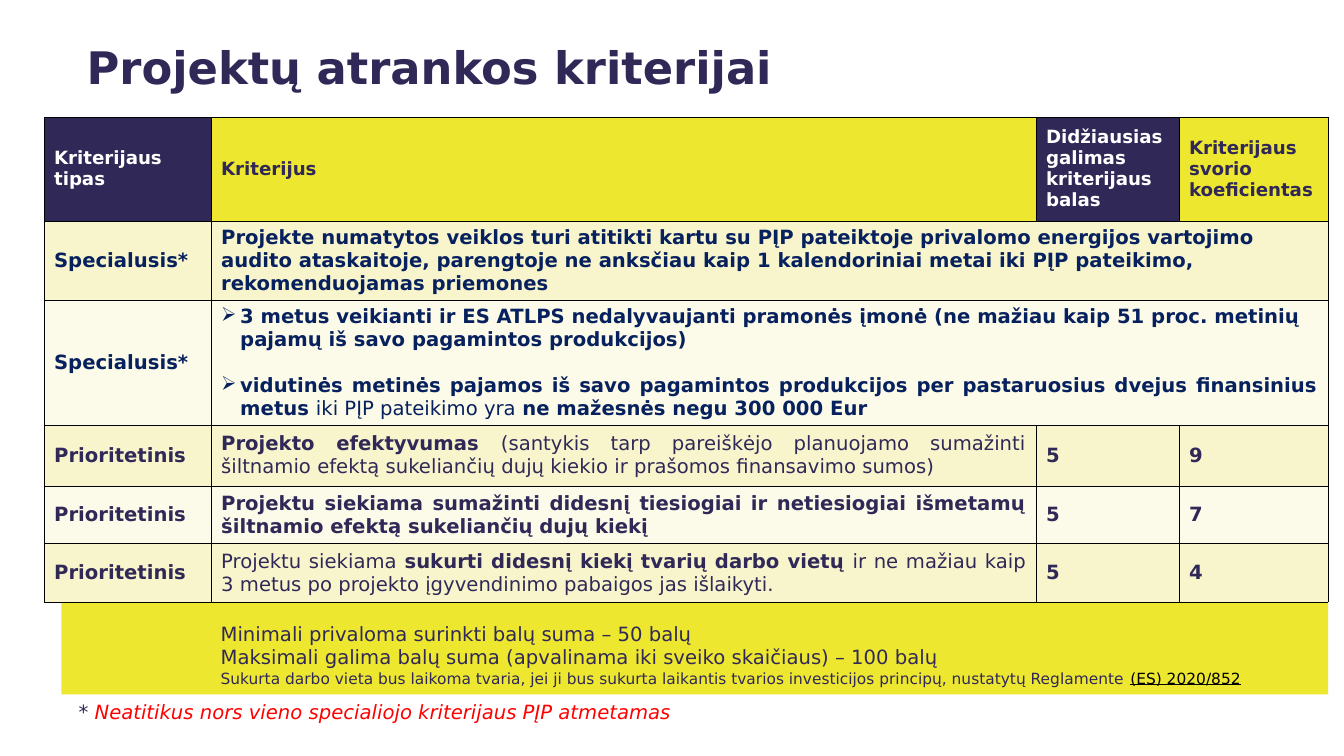
from lxml import etree
from pptx import Presentation
from pptx import util as u
from pptx.dml.color import RGBColor
from pptx.enum import shapes, text
from pptx.oxml.ns import qn

FONT = "DejaVu Sans"
COLORS = {
    "violet": "302857", "navy": "07215E", "white": "FFFFFF", "black": "000000",
    "red": "FF0000", "yellow": "EEE730", "cream": "F8F5CD", "pale": "FCFAE8",
}
TITLE = "Projektų atrankos kriterijai"
HEADERS = [
    ("Kriterijaus tipas", "white", "violet"),
    ("Kriterijus", "violet", "yellow"),
    ("Didžiausias galimas kriterijaus balas", "white", "violet"),
    ("Kriterijaus svorio koeficientas", "violet", "yellow"),
]
# Each criterion is a list of paragraphs; each paragraph is a list of (text, bold).
SPECIAL = [
    [[("Projekte numatytos veiklos turi atitikti kartu su PĮP pateiktoje privalomo "
       "energijos vartojimo audito ataskaitoje, parengtoje ne anksčiau kaip 1 kalendoriniai "
       "metai iki PĮP pateikimo, rekomenduojamas priemones", True)]],
    [[("3 metus veikianti ir ES ATLPS nedalyvaujanti pramonės įmonė (ne mažiau kaip "
       "51 proc. metinių pajamų iš savo pagamintos produkcijos)", True)],
     [("vidutinės metinės pajamos iš savo pagamintos produkcijos per pastaruosius "
       "dvejus finansinius metus ", True),
      ("iki PĮP pateikimo yra ", False),
      ("ne mažesnės negu 300 000 Eur", True)]],
]
PRIORITY = [
    ([("Projekto efektyvumas ", True),
      ("(santykis tarp pareiškėjo planuojamo sumažinti šiltnamio efektą sukeliančių "
       "dujų kiekio ir prašomos finansavimo sumos)", False)], "5", "9"),
    ([("Projektu siekiama sumažinti didesnį tiesiogiai ir netiesiogiai išmetamų "
       "šiltnamio efektą sukeliančių dujų kiekį", True)], "5", "7"),
    ([("Projektu siekiama ", False),
      ("sukurti didesnį kiekį tvarių darbo vietų ", True),
      ("ir ne mažiau kaip 3 metus po projekto įgyvendinimo pabaigos jas išlaikyti.",
       False)], "5", "4"),
]
SCORES = [
    "Minimali privaloma surinkti balų suma – 50 balų",
    "Maksimali galima balų suma (apvalinama iki sveiko skaičiaus) – 100 balų",
]
JOBS_NOTE = ("Sukurta darbo vieta bus laikoma tvaria, jei ji bus sukurta laikantis tvarios "
             "investicijos principų, nustatytų Reglamente ")
REGULATION = "(ES) 2020/852"
FOOTNOTE = "Neatitikus nors vieno specialiojo kriterijaus PĮP atmetamas"

COLUMN_WIDTHS = [4.21, 20.79, 3.6, 3.76]
ROW_HEIGHTS = [2.62, 1.99, 3.15, 1.53, 1.45, 1.47]
TABLE_LEFT, TABLE_TOP = 1.11, 2.95
BAND_LEFT, BAND_BOTTOM = 1.55, 17.5
TABLE_RIGHT = TABLE_LEFT + sum(COLUMN_WIDTHS)


def rgb(name):
    return RGBColor.from_string(COLORS[name])


def add_text(paragraph, content, size=14, color="violet", bold=False, italic=False,
             underline=False):
    run = paragraph.add_run()
    run.text = content
    font = run.font
    font.name, font.size = FONT, u.Pt(size)
    font.bold, font.italic, font.underline = bold, italic, underline
    font.color.rgb = rgb(color)


def add_bullet(paragraph):
    properties = paragraph._p.get_or_add_pPr()
    properties.set("marL", str(u.Cm(0.48)))
    properties.set("indent", str(-u.Cm(0.48)))
    etree.SubElement(properties, qn("a:buChar")).set("char", "➢")


def style_cell(cell, fill):
    """Fill the cell, centre it vertically and give it thin black borders."""
    cell.fill.solid()
    cell.fill.fore_color.rgb = rgb(fill)
    cell.vertical_anchor = text.MSO_ANCHOR.MIDDLE
    properties = cell._tc.get_or_add_tcPr()
    for index, side in enumerate(("lnL", "lnR", "lnT", "lnB")):
        line = etree.Element(qn(f"a:{side}"), w=str(u.Pt(0.25)))
        solid = etree.SubElement(line, qn("a:solidFill"))
        etree.SubElement(solid, qn("a:srgbClr"), val=COLORS["black"])
        properties.insert(index, line)


def add_box(slide, left, top, width, height):
    box = slide.shapes.add_textbox(u.Cm(left), u.Cm(top), u.Cm(width), u.Cm(height))
    box.text_frame.word_wrap = True
    return box.text_frame


def add_title(slide):
    title = slide.shapes.title
    title.left, title.top, title.width, title.height = map(u.Cm, (1.93, 0.66, 18.64, 2.03))
    frame = title.text_frame
    frame.auto_size = text.MSO_AUTO_SIZE.NONE
    frame.vertical_anchor = text.MSO_ANCHOR.MIDDLE
    paragraph = frame.paragraphs[0]
    paragraph.alignment = text.PP_ALIGN.LEFT
    add_text(paragraph, TITLE, size=32, bold=True)


def add_band(slide):
    top = 4.57
    band = slide.shapes.add_shape(
        shapes.MSO_SHAPE.RECTANGLE, u.Cm(BAND_LEFT), u.Cm(top),
        u.Cm(TABLE_RIGHT - BAND_LEFT), u.Cm(BAND_BOTTOM - top))
    band.shadow.inherit = False
    band.fill.solid()
    band.fill.fore_color.rgb = rgb("yellow")
    band.line.fill.background()


def add_criteria_table(slide):
    table = slide.shapes.add_table(
        len(ROW_HEIGHTS), len(COLUMN_WIDTHS), u.Cm(TABLE_LEFT), u.Cm(TABLE_TOP),
        u.Cm(sum(COLUMN_WIDTHS)), u.Cm(sum(ROW_HEIGHTS))).table
    for column, width in zip(table.columns, COLUMN_WIDTHS):
        column.width = u.Cm(width)
    for row, height in zip(table.rows, ROW_HEIGHTS):
        row.height = u.Cm(height)

    for column, (label, color, fill) in enumerate(HEADERS):
        cell = table.cell(0, column)
        style_cell(cell, fill)
        add_text(cell.text_frame.paragraphs[0], label, size=13, color=color, bold=True)
    for row in range(1, len(ROW_HEIGHTS)):
        for column in range(len(COLUMN_WIDTHS)):
            style_cell(table.cell(row, column), "cream" if row % 2 else "pale")

    for row, criteria in enumerate(SPECIAL, start=1):
        add_text(table.cell(row, 0).text_frame.paragraphs[0], "Specialusis*",
                 color="navy", bold=True)
        cell = table.cell(row, 1)
        cell.merge(table.cell(row, 3))
        frame = cell.text_frame
        for index, runs in enumerate(criteria):
            paragraph = frame.add_paragraph() if index else frame.paragraphs[0]
            if index:
                paragraph.space_before = u.Pt(16.4)
                paragraph.alignment = text.PP_ALIGN.JUSTIFY
            if len(criteria) > 1:
                add_bullet(paragraph)
            for content, bold in runs:
                add_text(paragraph, content, color="navy", bold=bold)

    for row, (runs, score, weight) in enumerate(PRIORITY, start=1 + len(SPECIAL)):
        for column, label in ((0, "Prioritetinis"), (2, score), (3, weight)):
            add_text(table.cell(row, column).text_frame.paragraphs[0], label, bold=True)
        paragraph = table.cell(row, 1).text_frame.paragraphs[0]
        paragraph.alignment = text.PP_ALIGN.JUSTIFY
        for content, bold in runs:
            add_text(paragraph, content, bold=bold)


def add_notes_below(slide):
    frame = add_box(slide, 5.31, 15.54, 26.82, BAND_BOTTOM - 15.54)
    add_text(frame.paragraphs[0], SCORES[0])
    add_text(frame.add_paragraph(), SCORES[1])
    paragraph = frame.add_paragraph()
    add_text(paragraph, JOBS_NOTE, size=11)
    add_text(paragraph, REGULATION, size=11, color="black", underline=True)

    paragraph = add_box(slide, 1.73, BAND_BOTTOM, 19.74, 0.86).paragraphs[0]
    add_text(paragraph, "* ", italic=True)
    add_text(paragraph, FOOTNOTE, color="red", italic=True)


def main():
    presentation = Presentation()
    presentation.slide_width, presentation.slide_height = u.Cm(33.87), u.Cm(19.05)
    slide = presentation.slides.add_slide(presentation.slide_layouts[5])
    add_title(slide)
    add_band(slide)
    add_criteria_table(slide)
    add_notes_below(slide)
    presentation.save("out.pptx")


if __name__ == "__main__":
    main()
